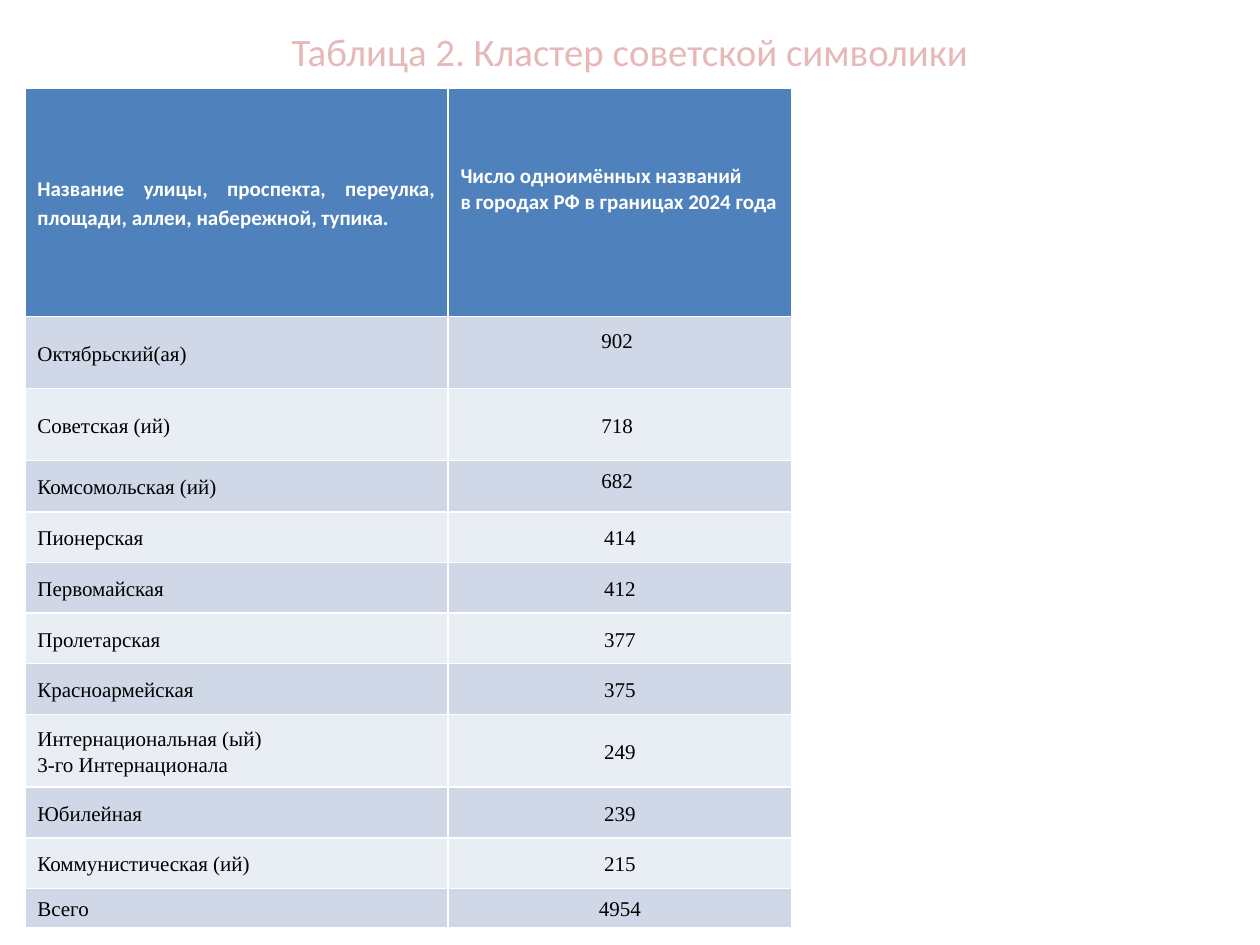
import pptx
import pptx.dml.color
import pptx.enum.text
import pptx.util

Cm = pptx.util.Cm
ALIGN = pptx.enum.text.PP_ALIGN
ANCHOR = pptx.enum.text.MSO_ANCHOR

THEME = {
    "title": "E6B9B8", "header": "4F81BD", "header_text": "FFFFFF",
    "bands": ("D0D8E8", "E9EDF4"), "text": "000000",
    "heading_font": "Calibri", "body_font": "Times New Roman",
    "title_size": 22.2, "table_size": 12, "spacing": 1.14,
}

TITLE = "Таблица 2. Кластер советской символики"
HEADER = (
    "Название улицы, проспекта, переулка, площади, аллеи, набережной, тупика. ",
    "Число одноимённых названий\nв городах РФ в границах 2024 года",
)
HEADER_HEIGHT = 4.6
# street name, number of streets, row height in cm
STREETS = [
    ("Октябрьский(ая)", "902 ", 1.45),
    ("Советская (ий)", "718 ", 1.45),
    ("Комсомольская (ий)", "682 ", 1.04),
    ("Пионерская", "414", 1.02),
    ("Первомайская", "412", 1.02),
    ("Пролетарская", "377", 1.02),
    ("Красноармейская", "375", 1.02),
    ("Интернациональная (ый)\n3-го Интернационала", "249", 1.47),
    ("Юбилейная", "239", 1.02),
    ("Коммунистическая (ий)", "215", 1.02),
    ("Всего", "4954", 0.56),
]
COLUMN_WIDTHS = (8.53, 6.93)
RAISED_MARGIN = 0.65  # bottom margin that lifts text above the middle


def rgb(name):
    return pptx.dml.color.RGBColor.from_string(name)


def style_text(frame, font, size, color, align, bold=False, spacing=None):
    for paragraph in frame.paragraphs:
        paragraph.alignment = align
        paragraph.line_spacing = spacing
        for run in paragraph.runs:
            run.font.name = font
            run.font.size = pptx.util.Pt(size)
            run.font.bold = bold
            run.font.color.rgb = rgb(color)


def fill_cell(cell, text, fill, font, color, align, bold=False,
              spacing=THEME["spacing"]):
    cell.text_frame.text = text
    cell.vertical_anchor = ANCHOR.MIDDLE
    cell.fill.solid()
    cell.fill.fore_color.rgb = rgb(fill)
    style_text(cell.text_frame, font, THEME["table_size"], color, align, bold, spacing)


def add_title(slide):
    title = slide.shapes.title
    title.left, title.top, title.width, title.height = Cm(1.27), Cm(0), Cm(22.86), Cm(2.06)
    title.text_frame.text = TITLE
    title.text_frame.vertical_anchor = ANCHOR.MIDDLE
    style_text(title.text_frame, THEME["heading_font"], THEME["title_size"],
               THEME["title"], ALIGN.CENTER)


def add_street_table(slide):
    heights = [HEADER_HEIGHT] + [height for _, _, height in STREETS]
    table = slide.shapes.add_table(
        len(heights), len(COLUMN_WIDTHS), Cm(0.5), Cm(1.78),
        Cm(sum(COLUMN_WIDTHS)), Cm(sum(heights))).table
    for column, width in zip(table.columns, COLUMN_WIDTHS):
        column.width = Cm(width)
    for row, height in zip(table.rows, heights):
        row.height = Cm(height)

    header_layout = ((ALIGN.JUSTIFY, THEME["spacing"]), (ALIGN.LEFT, None))
    for index, (align, spacing) in enumerate(header_layout):
        fill_cell(table.cell(0, index), HEADER[index], THEME["header"],
                  THEME["heading_font"], THEME["header_text"], align, True, spacing)

    for index, (street, count, _) in enumerate(STREETS):
        band = THEME["bands"][index % 2]
        for column, (text, align) in enumerate(((street, ALIGN.LEFT), (count, ALIGN.CENTER))):
            fill_cell(table.cell(index + 1, column), text, band,
                      THEME["body_font"], THEME["text"], align)

    for row in (0, 1):
        table.cell(row, 1).margin_bottom = Cm(RAISED_MARGIN)
    table.cell(3, 1).vertical_anchor = ANCHOR.TOP


def main():
    deck = pptx.Presentation()
    deck.slide_width, deck.slide_height = Cm(25.4), Cm(19.05)
    slide = deck.slides.add_slide(deck.slide_layouts[5])
    add_title(slide)
    add_street_table(slide)
    deck.save("out.pptx")


if __name__ == "__main__":
    main()
